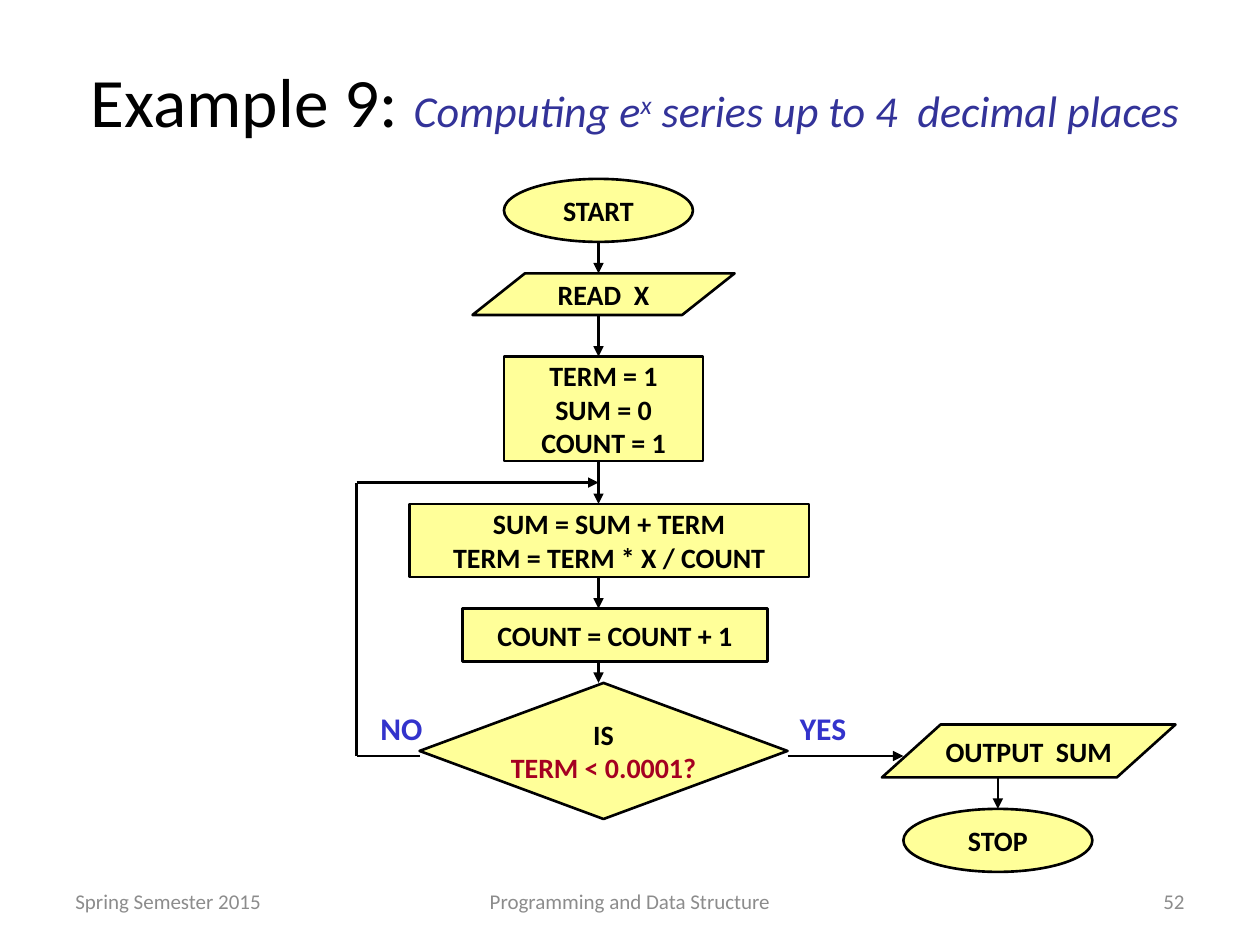
from lxml import etree
from pptx import Presentation
from pptx.dml.color import RGBColor
from pptx.enum.shapes import MSO_CONNECTOR, MSO_SHAPE
from pptx.enum.text import MSO_ANCHOR, PP_ALIGN
from pptx.oxml.ns import qn
from pptx.util import Inches, Pt

BLACK, YELLOW, RED = "000000", "FFFF99", "A50021"
INDIGO, BLUE, GRAY = "333399", "3333CC", "8C8C8C"


def color(value):
    return RGBColor.from_string(value)


def set_font(font, size, value, bold=False, italic=False):
    font.name = "Calibri"
    font.size = Pt(size)
    font.bold = bold
    font.italic = italic
    font.color.rgb = color(value)


def add_text(slide, box, text, size, value, align=PP_ALIGN.LEFT,
             anchor=MSO_ANCHOR.MIDDLE, bold=False):
    shape = slide.shapes.add_textbox(*map(Inches, box))
    frame = shape.text_frame
    frame.word_wrap = True
    frame.vertical_anchor = anchor
    paragraph = frame.paragraphs[0]
    paragraph.text = text
    paragraph.alignment = align
    set_font(paragraph.font, size, value, bold)


def add_title(slide, box):
    shape = slide.shapes.add_textbox(*map(Inches, box))
    frame = shape.text_frame
    frame.word_wrap = True
    frame.margin_left = frame.margin_right = 0
    frame.vertical_anchor = MSO_ANCHOR.MIDDLE
    paragraph = frame.paragraphs[0]
    paragraph.alignment = PP_ALIGN.CENTER
    heading = paragraph.add_run()
    heading.text = "Example 9: "
    set_font(heading.font, 39.6, BLACK)
    for text, raised in (("Computing e", False), ("x", True),
                         (" series up to 4  decimal places", False)):
        run = paragraph.add_run()
        run.text = text
        set_font(run.font, 25.2, INDIGO, italic=True)
        if raised:
            run.font._element.set("baseline", "30000")


def add_node(slide, kind, box, lines):
    shape = slide.shapes.add_shape(kind, *map(Inches, box))
    shape.shadow.inherit = False
    shape.fill.solid()
    shape.fill.fore_color.rgb = color(YELLOW)
    shape.line.color.rgb = color(BLACK)
    shape.line.width = Pt(1.5)
    frame = shape.text_frame
    frame.word_wrap = False
    frame.vertical_anchor = MSO_ANCHOR.MIDDLE
    for index, line in enumerate(lines):
        paragraph = frame.paragraphs[0] if index == 0 else frame.add_paragraph()
        paragraph.text = line
        paragraph.alignment = PP_ALIGN.CENTER
        set_font(paragraph.font, 16, RED if line.endswith("?") else BLACK, bold=True)


def add_line(slide, start, end, arrow=True):
    connector = slide.shapes.add_connector(
        MSO_CONNECTOR.STRAIGHT, *map(Inches, start + end))
    connector.line.color.rgb = color(BLACK)
    connector.line.width = Pt(1.5)
    if arrow:
        etree.SubElement(connector.line._get_or_add_ln(), qn("a:tailEnd"), type="triangle")
    etree.SubElement(connector._element.spPr, qn("a:effectLst"))


def add_flowchart(slide, box):
    left, top, width, height = box
    data, step = MSO_SHAPE.FLOWCHART_DATA, MSO_SHAPE.RECTANGLE
    # Positions are offsets from the top left of the chart
    nodes = [
        (MSO_SHAPE.OVAL, (1.17, 0, 1.5, 0.5), ["START"]),
        (data, (0.92, 0.75, 2.08, 0.33), ["READ  X"]),
        (step, (1.17, 1.41, 1.58, 0.83), ["TERM = 1", "SUM = 0", "COUNT = 1"]),
        (step, (0.42, 2.58, 3.17, 0.58), ["SUM = SUM + TERM", "TERM = TERM * X / COUNT"]),
        (step, (0.84, 3.41, 2.42, 0.42), ["COUNT = COUNT + 1"]),
        (MSO_SHAPE.FLOWCHART_DECISION, (0.5, 4, 2.92, 1.08), ["IS", "TERM < 0.0001?"]),
        (data, (width - 2.33, 4.33, 2.33, 0.42), ["OUTPUT  SUM"]),
        (MSO_SHAPE.OVAL, (4.34, height - 0.5, 1.5, 0.5), ["STOP"]),
    ]
    for kind, (x, y, w, h), lines in nodes:
        add_node(slide, kind, (left + x, top + y, w, h), lines)

    # Downward arrows join each step to the next
    boxes = [node[1] for node in nodes]
    main_axis, output_axis = left + 1.92, left + 5.09
    for axis, chain in ((main_axis, boxes[:6]), (output_axis, boxes[6:])):
        for upper, lower in zip(chain, chain[1:]):
            add_line(slide, (axis, top + upper[1] + upper[3]), (axis, top + lower[1]))

    # Loop back on NO, exit on YES
    branch, loop = top + 4.58, top + 2.41
    add_line(slide, (left + 0.5, branch), (left, branch), arrow=False)
    add_line(slide, (left, branch), (left, loop), arrow=False)
    add_line(slide, (left, loop), (main_axis, loop))
    add_line(slide, (left + 3.42, branch), (left + 4.34, branch))
    for x, label in ((0.09, "NO"), (3.42, "YES")):
        add_text(slide, (left + x, top + 4.16, 1.17, 0.4), label, 18, BLUE,
                 anchor=MSO_ANCHOR.TOP, bold=True)


def add_footer(slide, box):
    left, top, width, height = box
    side, middle = 2.33, 3.17
    for x, w, text, align in (
        (0, side, "Spring Semester 2015", PP_ALIGN.LEFT),
        ((width - middle) / 2, middle, "Programming and Data Structure", PP_ALIGN.CENTER),
        (width - side, side, "52", PP_ALIGN.RIGHT),
    ):
        add_text(slide, (left + x, top, w, height), text, 12, GRAY, align)


def main():
    presentation = Presentation()
    presentation.slide_width = Inches(10)
    presentation.slide_height = Inches(7.5)
    slide = presentation.slides.add_slide(presentation.slide_layouts[6])
    add_title(slide, (0.58, 0.33, 8.92, 0.92))
    add_footer(slide, (0.5, 6.95, 9, 0.4))
    add_flowchart(slide, (2.83, 1.42, 6.5, 5.5))
    presentation.save("out.pptx")


if __name__ == "__main__":
    main()
